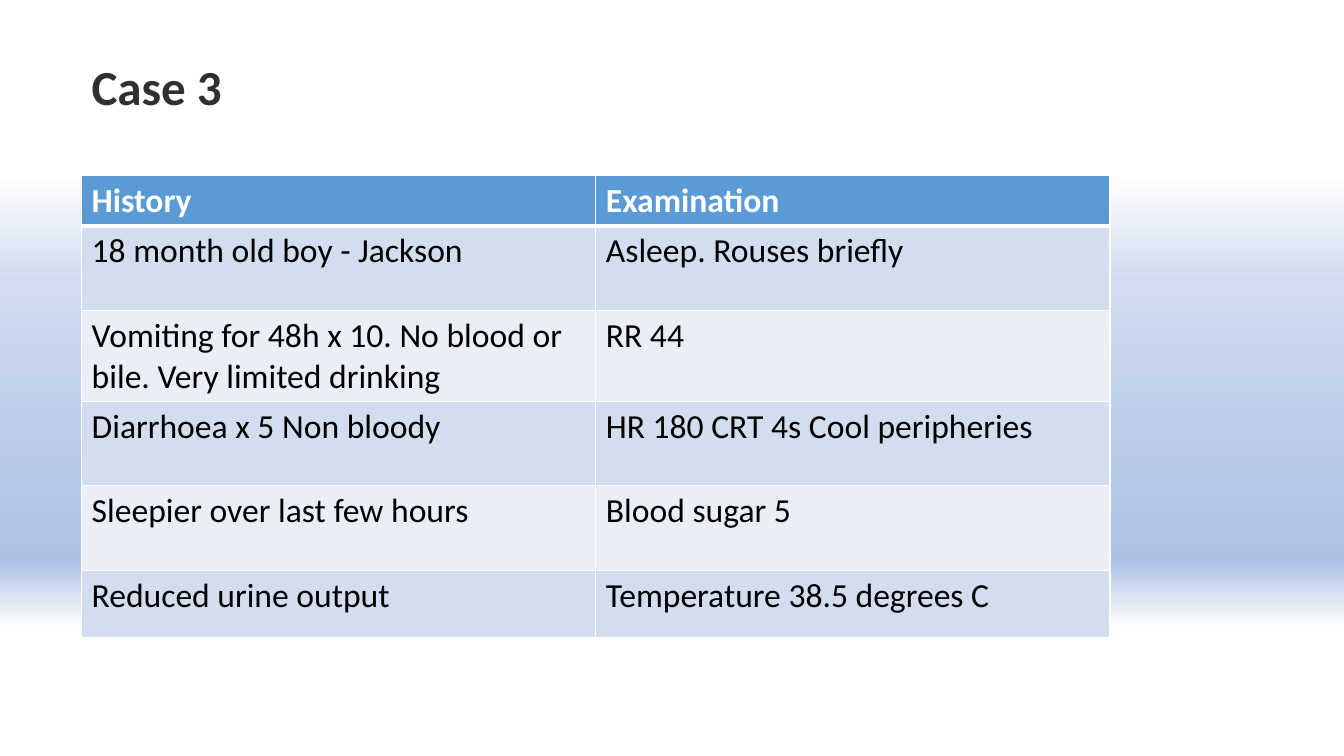
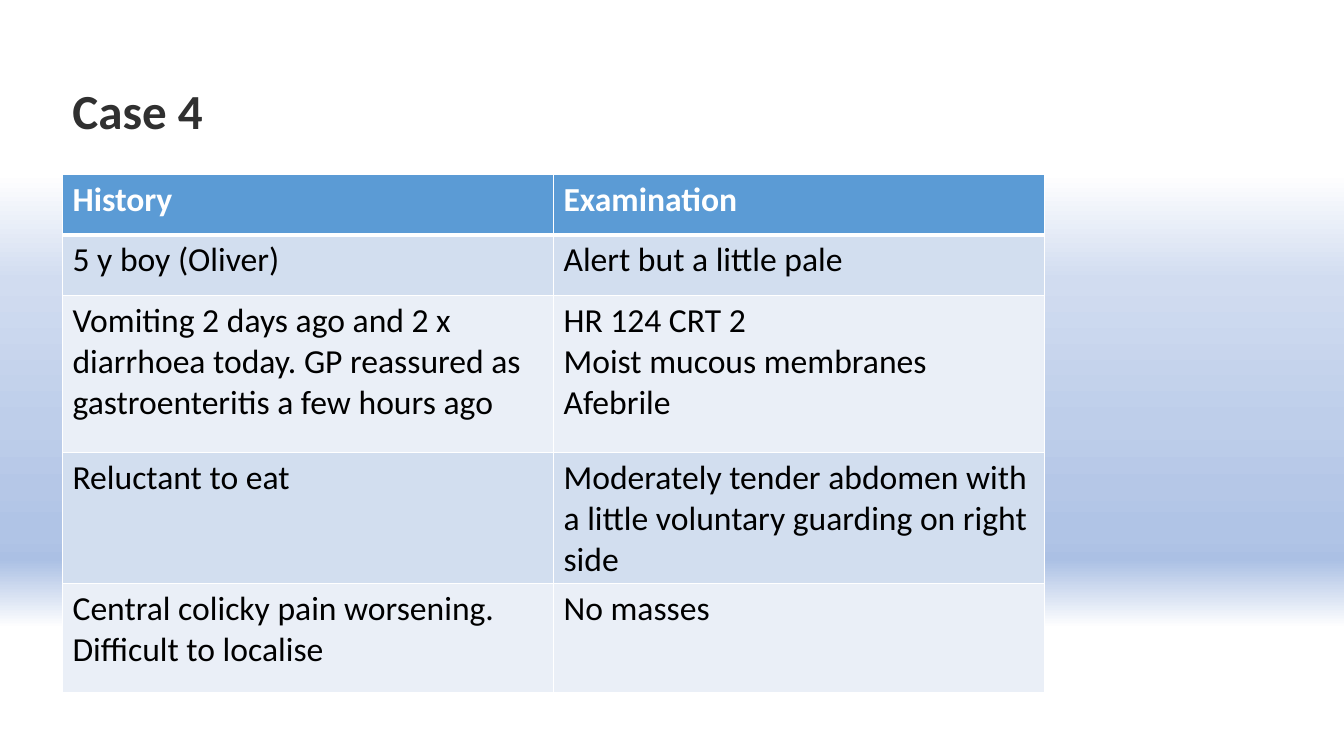
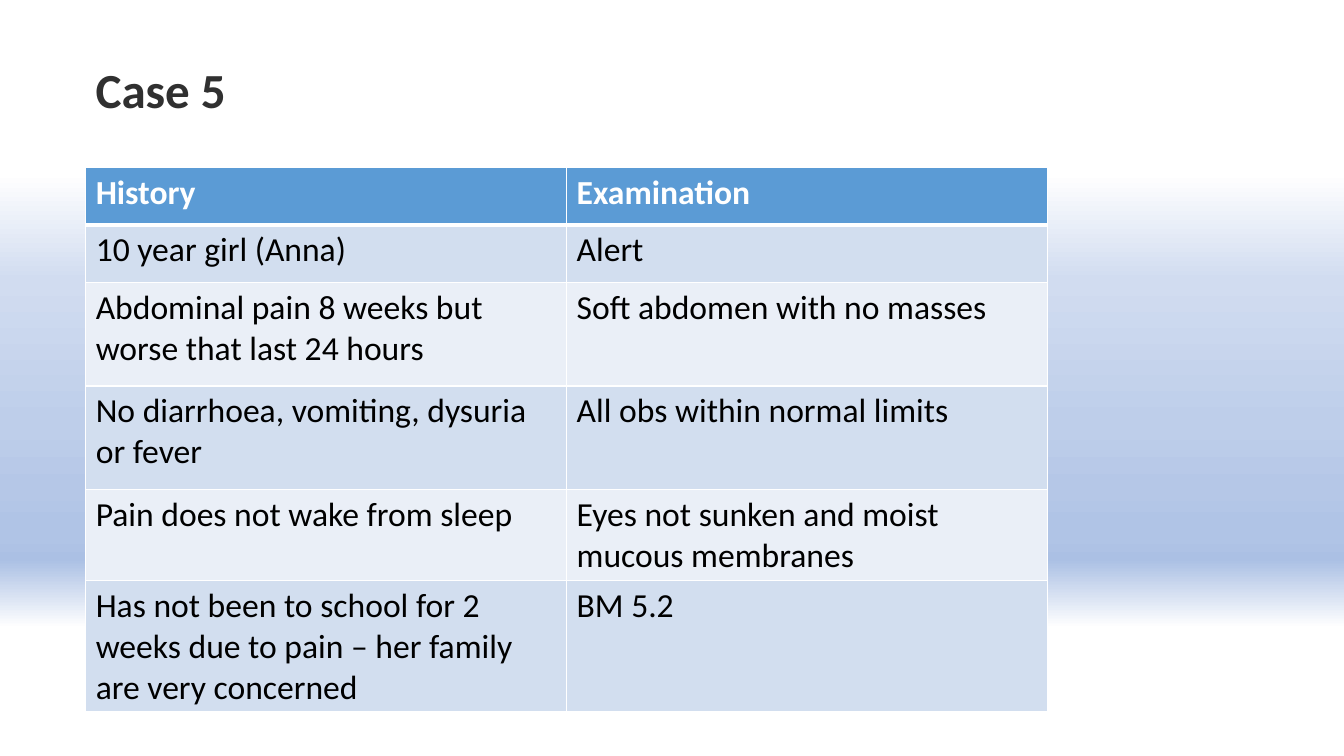
from lxml.etree import SubElement
from pptx import Presentation
from pptx.dml.color import RGBColor
from pptx.enum.text import MSO_ANCHOR
from pptx.oxml.ns import qn
from pptx.util import Inches, Pt

FONT = "Calibri"
COLORS = {
    "title": "303030",
    "header": "5B9BD5",
    "odd_row": "D2DEEF",
    "even_row": "EAEFF7",
    "line": "FFFFFF",
    "header_text": "FFFFFF",
    "body_text": "000000",
}
# Background stops: percent of slide height, colour
BACKGROUND = [
    (23, "FFFFFF"), (37, "D1DCF0"), (56, "BECEEA"), (65, "B5C7E7"), (69, "B0C4E6"),
    (72, "AEC2E5"), (73, "ADC1E5"), (73, "ABC0E4"), (74, "ABC0E4"), (83, "FFFFFF"),
]
TITLE_WIDTH, TITLE_HEIGHT = 4.67, 1.2
HEADINGS = ("History", "Examination")

CASES = [
    {
        "title": "Case 3", "left": 0.81, "title_top": 0.29, "table_top": 1.74,
        "column_width": 5.1, "row_heights": [0.47, 0.84, 0.84, 0.84, 0.84, 0.67],
        "findings": [
            ("18 month old boy - Jackson", "Asleep. Rouses briefly"),
            ("Vomiting for 48h x 10. No blood or bile. Very limited drinking", "RR 44"),
            ("Diarrhoea x 5 Non bloody", "HR 180 CRT 4s Cool peripheries"),
            ("Sleepier over last few hours", "Blood sugar 5"),
            ("Reduced urine output", "Temperature 38.5 degrees C"),
        ],
    },
    {
        "title": "Case 4", "left": 0.62, "title_top": 0.53, "table_top": 1.73,
        "column_width": 4.87, "row_heights": [0.6, 0.6, 1.56, 1.08, 1.08],
        "findings": [
            ("5 y boy (Oliver)", "Alert but a little pale"),
            ("Vomiting 2 days ago and 2 x diarrhoea today. "
             "GP reassured as gastroenteritis a few hours ago",
             "HR 124 CRT 2\nMoist mucous membranes\nAfebrile"),
            ("Reluctant to eat",
             "Moderately tender abdomen with a little voluntary guarding on right side"),
            ("Central colicky pain worsening. Difficult to localise", "No masses"),
        ],
    },
    {
        "title": "Case 5", "left": 0.85, "title_top": 0.32, "table_top": 1.66,
        "column_width": 4.77, "row_heights": [0.57, 0.57, 1.03, 1.03, 0.84, 0.5],
        "findings": [
            ("10 year girl (Anna)", "Alert"),
            ("Abdominal pain 8 weeks but worse that last 24 hours",
             "Soft abdomen with no masses"),
            ("No diarrhoea, vomiting, dysuria or fever", "All obs within normal limits"),
            ("Pain does not wake from sleep", "Eyes not sunken and moist mucous membranes"),
            ("Has not been to school for 2 weeks due to pain – "
             "her family are very concerned", "BM 5.2"),
        ],
    },
]


def set_background(master):
    """Give every slide the vertical blue gradient."""
    fill = master.background.fill
    fill.gradient()
    fill.gradient_angle = 270
    stops = master.element.find(".//" + qn("a:gsLst"))
    for stop in list(stops):
        stops.remove(stop)
    for percent, color in BACKGROUND:
        stop = SubElement(stops, qn("a:gs"), pos=str(percent * 1000))
        SubElement(stop, qn("a:srgbClr"), val=color)


def style_font(paragraph, size, color, bold):
    font = paragraph.font
    font.name, font.size, font.bold = FONT, Pt(size), bold
    font.color.rgb = RGBColor.from_string(COLORS[color])


def add_title(slide, text, left, top):
    box = slide.shapes.add_textbox(
        Inches(left), Inches(top), Inches(TITLE_WIDTH), Inches(TITLE_HEIGHT))
    frame = box.text_frame
    frame.word_wrap = True
    frame.vertical_anchor = MSO_ANCHOR.MIDDLE
    frame.text = text
    paragraph = frame.paragraphs[0]
    paragraph.line_spacing = 0.9
    style_font(paragraph, 35, "title", True)


def set_borders(cell, row):
    """Thin white lines, with a thick one between header and body."""
    widths = {"L": 1, "R": 1, "T": 3 if row == 1 else 1, "B": 3 if row == 0 else 1}
    properties = cell._tc.get_or_add_tcPr()
    for side, width in widths.items():
        line = SubElement(properties, qn("a:ln" + side), w=str(Pt(width)))
        SubElement(SubElement(line, qn("a:solidFill")), qn("a:srgbClr"), val=COLORS["line"])


def style_cell(cell, text, row):
    is_header = row == 0
    fill_name = "header" if is_header else "odd_row" if row % 2 else "even_row"
    set_borders(cell, row)
    cell.fill.solid()
    cell.fill.fore_color.rgb = RGBColor.from_string(COLORS[fill_name])
    cell.text = text
    for paragraph in cell.text_frame.paragraphs:
        style_font(paragraph, 24, "header_text" if is_header else "body_text", is_header)


def add_findings_table(slide, findings, left, top, column_width, row_heights):
    rows = [HEADINGS, *findings]
    table = slide.shapes.add_table(
        len(rows), len(HEADINGS), Inches(left), Inches(top),
        Inches(column_width * len(HEADINGS)), Inches(sum(row_heights))).table
    for column in table.columns:
        column.width = Inches(column_width)
    for row, (height, texts) in enumerate(zip(row_heights, rows)):
        table.rows[row].height = Inches(height)
        for column, text in enumerate(texts):
            style_cell(table.cell(row, column), text, row)


def add_case_slide(presentation, case):
    slide = presentation.slides.add_slide(presentation.slide_layouts[6])
    add_title(slide, case["title"], case["left"], case["title_top"])
    add_findings_table(slide, case["findings"], case["left"], case["table_top"],
                       case["column_width"], case["row_heights"])


def main():
    presentation = Presentation()
    presentation.slide_width, presentation.slide_height = Inches(13.33), Inches(7.5)
    set_background(presentation.slide_master)
    for case in CASES:
        add_case_slide(presentation, case)
    presentation.save("out.pptx")


if __name__ == "__main__":
    main()
